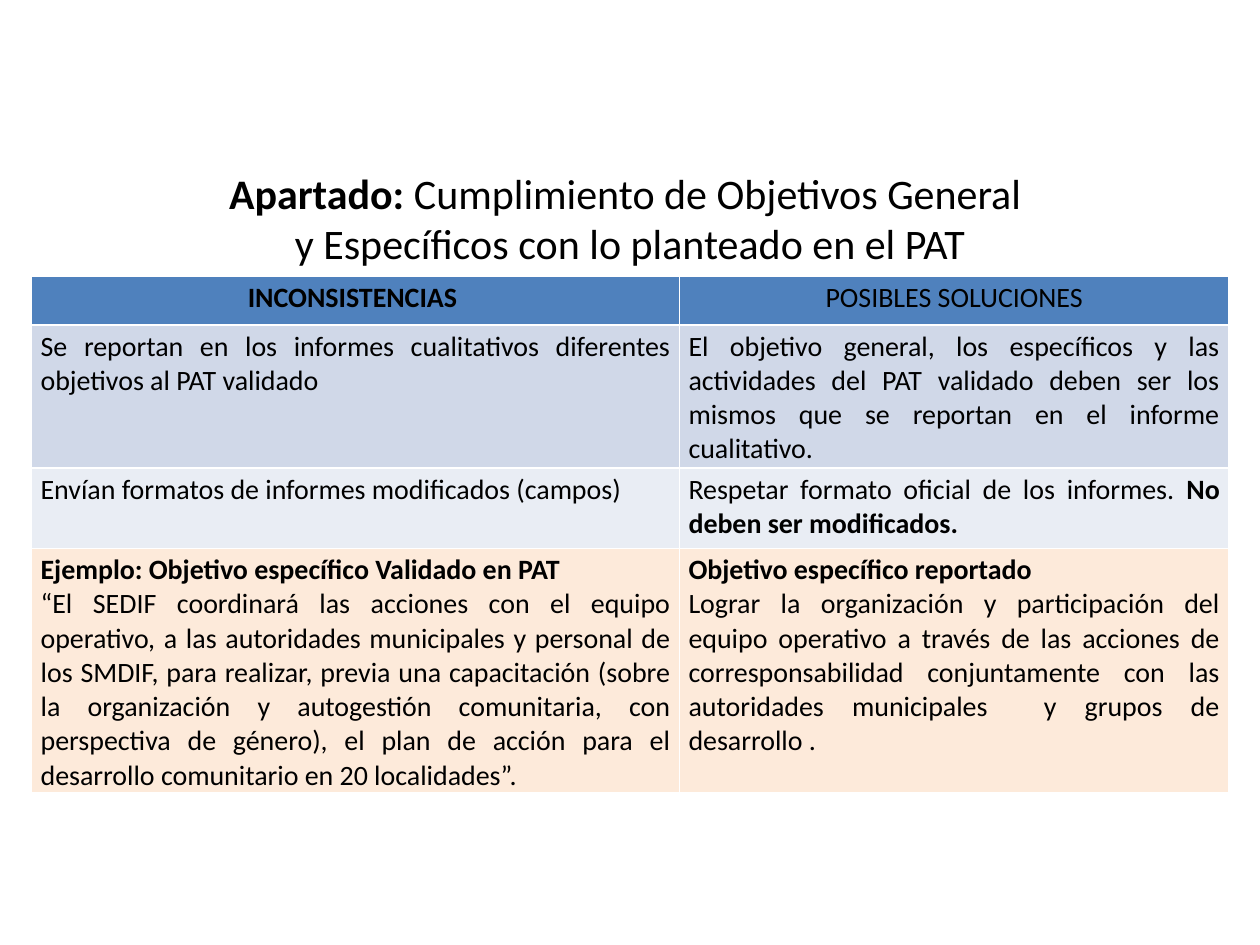
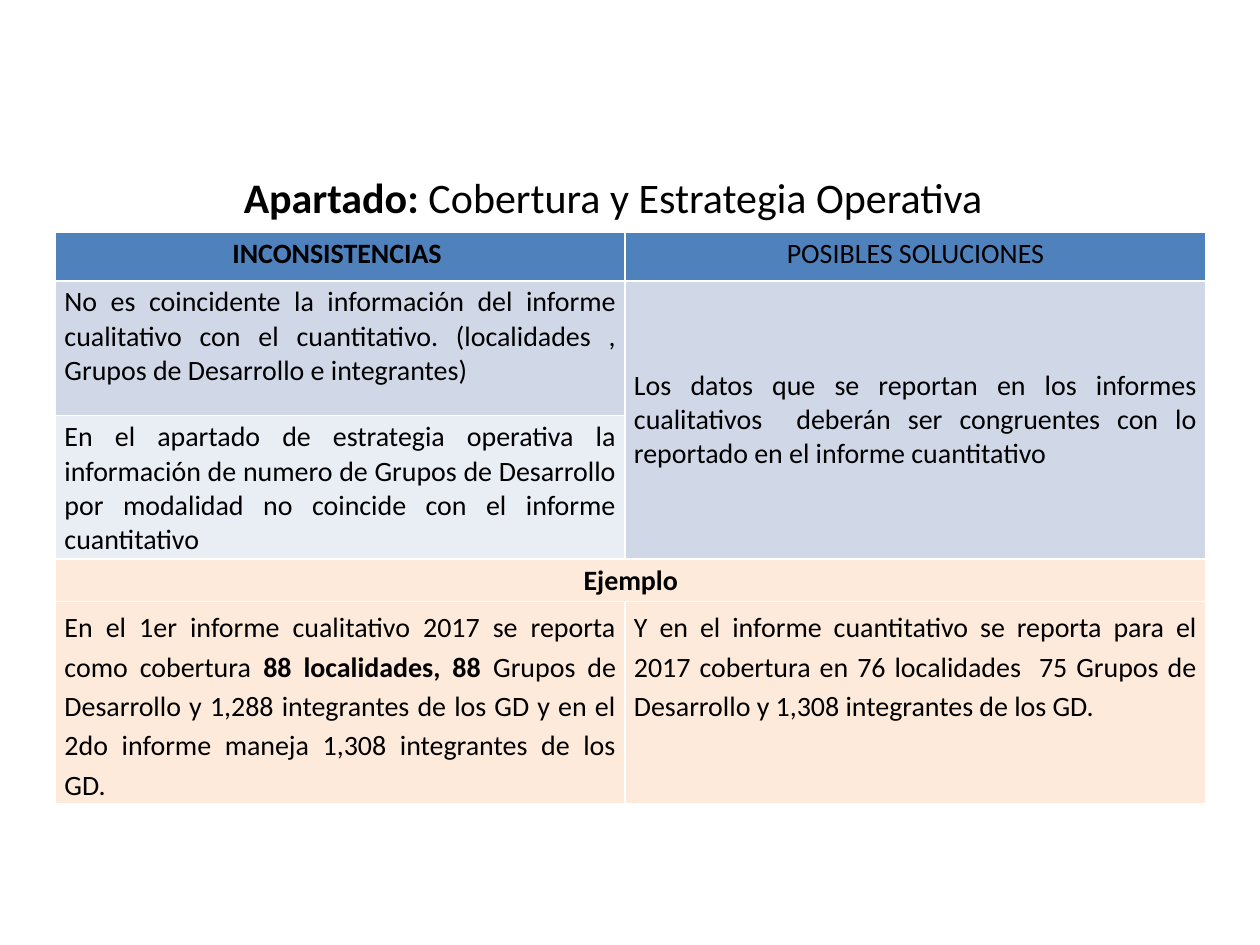
from pptx import Presentation
from pptx.dml.color import RGBColor
from pptx.enum.text import MSO_ANCHOR as ANCHOR, PP_ALIGN as ALIGN
from pptx.oxml import parse_xml
from pptx.oxml.ns import nsdecls
from pptx.util import Cm, Pt

FONT = "Calibri"
BLACK = "000000"
WHITE = "FFFFFF"
HEADER = "4F81BD"
BAND_DARK = "D0D8E8"
BAND_LIGHT = "E9EDF4"
EXAMPLE = "FDEADA"
HEADINGS = ["**INCONSISTENCIAS **", "POSIBLES SOLUCIONES"]


def color(value):
    return RGBColor.from_string(value)


def write(p, text, size, align, spacing=None):
    p.alignment = align
    if spacing:
        p.line_spacing = spacing
    for i, part in enumerate(text.split("**")):
        for j, line in enumerate(part.split("\n")):
            if j:
                p.add_line_break()
            if line:
                r = p.add_run()
                r.text = line
                r.font.name = FONT
                r.font.size = Pt(size)
                r.font.bold = i % 2 == 1
                r.font.color.rgb = color(BLACK)


def add_title(s, box, text):
    tf = s.shapes.add_textbox(*map(Cm, box)).text_frame
    tf.word_wrap = True
    write(tf.paragraphs[0], "**Apartado: **" + text, 24, ALIGN.CENTER)


def style_cell(cell, fill):
    tc_pr = cell._tc.get_or_add_tcPr()
    for side in "LRTB":
        tc_pr.append(parse_xml(
            f'<a:ln{side} {nsdecls("a")} w="12700"><a:solidFill>'
            f'<a:srgbClr val="{WHITE}"/></a:solidFill></a:ln{side}>'))
    cell.fill.solid()
    cell.fill.fore_color.rgb = color(fill)
    cell.margin_left = cell.margin_right = Cm(0.18)
    cell.margin_top = cell.margin_bottom = Cm(0.09)


def fill_cell(cell, paragraphs, align, spacing=None):
    tf = cell.text_frame
    for i, text in enumerate(paragraphs):
        p = tf.add_paragraph() if i else tf.paragraphs[0]
        write(p, text, 16, align, spacing)


def add_comparison(s, left, top, widths, heights, rows, fills,
                   merges=(), centered=(0,), loose=()):
    rows = [HEADINGS] + rows
    fills = [HEADER] + fills
    table = s.shapes.add_table(len(rows), len(widths), Cm(left), Cm(top),
                               Cm(sum(widths)), Cm(sum(heights))).table
    for column, width in zip(table.columns, widths):
        column.width = Cm(width)
    for row, height in zip(table.rows, heights):
        row.height = Cm(height)
    for i, texts in enumerate(rows):
        align = ALIGN.CENTER if i in centered else ALIGN.JUSTIFY
        for j, text in enumerate(texts):
            cell = table.cell(i, j)
            style_cell(cell, fills[i])
            if text:
                fill_cell(cell, text.split("\n"), align,
                          1.15 if i in loose else None)
    for first, last in merges:
        table.cell(*first).merge(table.cell(*last))
    return table


def objectives_slide(prs):
    s = prs.slides.add_slide(prs.slide_layouts[6])
    add_title(s, (1.09, 3.25, 23.22, 2.31),
              "Cumplimiento de Objetivos General \n"
              "y Específicos con lo planteado en el PAT")
    rows = [
        ["Se reportan en los informes cualitativos diferentes objetivos al "
         "PAT validado",
         "El objetivo general, los específicos y las actividades del PAT "
         "validado deben ser los mismos que se reportan en el informe "
         "cualitativo."],
        ["Envían formatos de informes modificados (campos)",
         "Respetar formato oficial de los informes. "
         "**No deben ser modificados.**"],
        ["**Ejemplo: Objetivo específico Validado en PAT**\n"
         "“El SEDIF coordinará las acciones con el equipo operativo, a las "
         "autoridades municipales y personal de los SMDIF, para realizar, "
         "previa una capacitación (sobre la organización y autogestión "
         "comunitaria, con perspectiva de género), el plan de acción para "
         "el desarrollo comunitario en 20 localidades”.",
         "**Objetivo específico reportado**\n"
         "Lograr la organización y participación del equipo operativo a "
         "través de las acciones de corresponsabilidad conjuntamente con "
         "las autoridades municipales  y grupos de desarrollo ."],
    ]
    add_comparison(s, 0.64, 5.57, [13.06, 11.07], [0.98, 2.72, 1.62, 4.62],
                   rows, [BAND_DARK, BAND_LIGHT, EXAMPLE])


def coverage_slide(prs):
    s = prs.slides.add_slide(prs.slide_layouts[6])
    add_title(s, (1.68, 3.33, 21.36, 1.96), "Cobertura y Estrategia Operativa")
    rows = [
        ["No es coincidente la información del informe cualitativo con el "
         "cuantitativo. (localidades , Grupos de Desarrollo e integrantes)",
         "Los datos que se reportan en los informes cualitativos  deberán "
         "ser congruentes con lo reportado en el informe cuantitativo"],
        ["En el apartado de estrategia operativa la información de numero de "
         "Grupos de Desarrollo por modalidad no coincide con el informe "
         "cuantitativo", ""],
        ["**Ejemplo**", ""],
        ["En el 1er informe cualitativo 2017 se reporta como cobertura "
         "**88 localidades, 88 **Grupos de Desarrollo y 1,288 integrantes de "
         "los GD y en el 2do informe maneja 1,308 integrantes de los GD.",
         "Y en el informe cuantitativo se reporta para el 2017 cobertura en "
         "76 localidades  75 Grupos de Desarrollo y 1,308 integrantes de "
         "los GD."],
    ]
    table = add_comparison(
        s, 1.12, 4.68, [11.48, 11.71], [0.98, 2.72, 2.08, 0.84, 3.91], rows,
        [BAND_DARK, BAND_LIGHT, EXAMPLE, EXAMPLE],
        merges=[((1, 1), (2, 1)), ((3, 0), (3, 1))],
        centered=(0, 3), loose=(4,))
    table.cell(1, 1).vertical_anchor = ANCHOR.MIDDLE


def main():
    prs = Presentation()
    prs.slide_width, prs.slide_height = Cm(25.4), Cm(19.05)
    objectives_slide(prs)
    coverage_slide(prs)
    prs.save("out.pptx")


if __name__ == "__main__":
    main()
